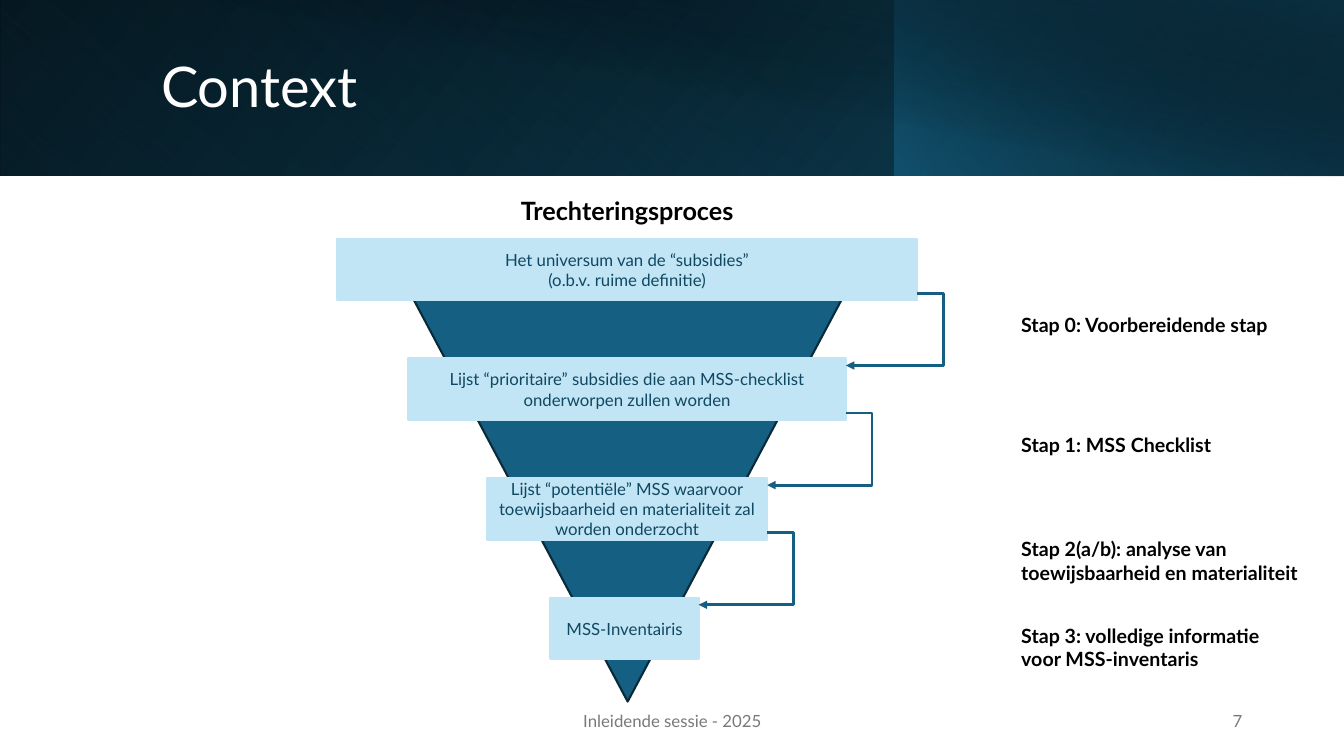
from dataclasses import dataclass
from lxml.etree import SubElement
from pptx import Presentation
from pptx.dml.color import RGBColor
from pptx.enum.shapes import MSO_CONNECTOR, MSO_SHAPE
from pptx.enum.text import MSO_ANCHOR, PP_ALIGN
from pptx.oxml.ns import qn
from pptx.util import Inches, Pt

COLORS = {
    "white": "FFFFFF", "black": "000000", "gray": "797979",
    "blue": "156082", "navy": "104862", "deep": "0B3041",
    "edge": "092A39", "pale": "C1E5F5",
}
FONT = "Lato"
TAB_W, TAB_H = 0.1, 0.13
BAR_H, BAR_TOP, BAR_SPAN = 0.61, 2.37, 3.56
ENTRY, EXIT, REACH = 0.07, 0.54, 0.26


@dataclass
class Stop:
    """One gradient stop, with its opacity in percent."""
    place: float
    color: str
    alpha: int = 100


@dataclass
class Panel:
    """One gradient layer of the header."""
    box: tuple
    angle: int
    stops: tuple
    turn: int = 0
    flip: bool = True


@dataclass
class Bar:
    """One level of the funnel."""
    left: float
    width: float
    text: str


@dataclass
class Step:
    """One step label beside the funnel."""
    top: float
    width: float
    height: float
    text: str


PANELS = [
    Panel((0, 0, 13.33, 1.74), 140, (Stop(0, "black"), Stop(1, "navy"))),
    Panel((0, 0, 8.88, 1.74), 230,
          (Stop(0.2, "blue", 0), Stop(1, "deep", 55)), turn=180),
    Panel((8.87, 0, 4.46, 1.74), 220,
          (Stop(0, "blue", 66), Stop(1, "black", 30))),
    Panel((0.5, 0, 12.83, 1.75), 280,
          (Stop(0.5, "black", 0), Stop(0.99, "deep", 52)), flip=False),
]
BARS = [
    Bar(3.34, 5.76, "Het universum van de “subsidies”\n(o.b.v. ruime definitie)"),
    Bar(4.05, 4.34, "Lijst “prioritaire” subsidies die aan MSS-checklist "
        "onderworpen zullen worden"),
    Bar(4.83, 2.78, "Lijst “potentiële” MSS waarvoor toewijsbaarheid en "
        "materialiteit zal worden onderzocht"),
    Bar(5.46, 1.47, "MSS-Inventairis"),
]
STEPS = [
    Step(3.06, 2.93, 0.34, "Stap 0: Voorbereidende stap"),
    Step(4.25, 2.98, 0.34, "Stap 1: MSS Checklist"),
    Step(5.28, 2.99, 0.81, "Stap 2(a/b): analyse van toewijsbaarheid en materialiteit"),
    Step(6.14, 2.99, 0.57, "Stap 3: volledige informatie voor MSS-inventaris"),
]


def rgb(name: str) -> RGBColor:
    """Look up a colour by name."""
    return RGBColor.from_string(COLORS[name])


def write(shape, text: str, size: float = 12, color: str = "black",
          bold: bool = False, align=PP_ALIGN.LEFT, anchor=MSO_ANCHOR.TOP,
          space: float = 1.0):
    """Put formatted text in a shape."""
    frame = shape.text_frame
    frame.word_wrap = True
    frame.vertical_anchor = anchor
    frame.text = text
    for para in frame.paragraphs:
        para.alignment = align
        para.line_spacing = space
        para.font.name = FONT
        para.font.size = Pt(size)
        para.font.bold = bold
        para.font.color.rgb = rgb(color)


def label(slide, box: tuple, text: str, **style):
    """Add a text box."""
    write(slide.shapes.add_textbox(*map(Inches, box)), text, **style)


def block(slide, kind, box: tuple, fill: str, line: str):
    """Add a solid shape with an outline."""
    shape = slide.shapes.add_shape(kind, *map(Inches, box))
    shape.shadow.inherit = False
    shape.fill.solid()
    shape.fill.fore_color.rgb = rgb(fill)
    shape.line.color.rgb = rgb(line)
    shape.line.width = Pt(1.5)
    return shape


def shade(slide, panel: Panel):
    """Add one gradient layer."""
    shape = slide.shapes.add_shape(MSO_SHAPE.RECTANGLE, *map(Inches, panel.box))
    shape.shadow.inherit = False
    shape.line.fill.background()
    shape.rotation = panel.turn
    props = shape.element.spPr
    if panel.flip:
        props.find(qn("a:xfrm")).set("flipH", "1")
    shape.fill.gradient()
    shape.fill.gradient_angle = 360 - panel.angle
    for mark, stop in zip(shape.fill.gradient_stops, panel.stops):
        mark.position = stop.place
        mark.color.rgb = rgb(stop.color)
    for node, stop in zip(props.iter(qn("a:srgbClr")), panel.stops):
        if stop.alpha < 100:
            SubElement(node, qn("a:alpha")).set("val", str(stop.alpha * 1000))


def add_tab(slide, bar: Bar, mid: float):
    """Add a small docking tab at the right end of a bar."""
    box = (bar.left + bar.width - TAB_W, mid - TAB_H / 2, TAB_W, TAB_H)
    return block(slide, MSO_SHAPE.RECTANGLE, box, "pale", "pale")


def link(slide, start, end):
    """Join two tabs by an elbow arrow that loops out to the right."""
    arrow = slide.shapes.add_connector(MSO_CONNECTOR.ELBOW, 0, 0, 0, 0)
    arrow.begin_connect(start, 3)
    arrow.end_connect(end, 3)
    arrow.line.color.rgb = rgb("blue")
    arrow.line.width = Pt(2)
    props = arrow.element.spPr
    guides = props.find(qn("a:prstGeom")).get_or_add_avLst()
    bend = round(-Inches(REACH) / arrow.width * 100000)
    guide = SubElement(guides, qn("a:gd"))
    guide.set("name", "adj1")
    guide.set("fmla", f"val {bend}")
    SubElement(props.find(qn("a:ln")), qn("a:tailEnd")).set("type", "triangle")
    SubElement(props, qn("a:effectLst"))


def funnel(slide):
    """Draw the funnel, its bars and the arrows between them."""
    cone = block(slide, MSO_SHAPE.ISOSCELES_TRIANGLE,
                 (3.83, 2.46, 4.79, 4.5), "blue", "edge")
    cone.rotation = 180
    tops = [BAR_TOP + BAR_SPAN * i / (len(BARS) - 1) for i in range(len(BARS))]
    for bar, top in zip(BARS, tops):
        shape = block(slide, MSO_SHAPE.RECTANGLE,
                      (bar.left, top, bar.width, BAR_H), "pale", "pale")
        write(shape, bar.text, color="navy", align=PP_ALIGN.CENTER,
              anchor=MSO_ANCHOR.MIDDLE)
    levels = list(zip(BARS, tops))
    for (bar, top), (below, floor) in zip(levels, levels[1:]):
        link(slide, add_tab(slide, bar, top + EXIT),
             add_tab(slide, below, floor + ENTRY))


def main():
    """Build and save the slide."""
    deck = Presentation()
    deck.slide_width, deck.slide_height = Inches(13.33), Inches(7.5)
    slide = deck.slides.add_slide(deck.slide_layouts[6])
    for panel in PANELS:
        shade(slide, panel)
    label(slide, (1.5, 0.32, 10.82, 1.13), "Context", size=40, color="white",
          anchor=MSO_ANCHOR.MIDDLE, space=0.9)
    label(slide, (4.42, 6.95, 4.5, 0.4), "Inleidende sessie - 2025", color="gray",
          align=PP_ALIGN.CENTER, anchor=MSO_ANCHOR.MIDDLE)
    label(slide, (9.42, 6.95, 3, 0.4), "7", color="gray",
          align=PP_ALIGN.RIGHT, anchor=MSO_ANCHOR.MIDDLE)
    funnel(slide)
    label(slide, (3.34, 1.89, 5.76, 0.4), "Trechteringsproces", size=18,
          bold=True, align=PP_ALIGN.CENTER)
    for step in STEPS:
        label(slide, (10.03, step.top, step.width, step.height), step.text,
              size=14, bold=True)
    deck.save("out.pptx")


if __name__ == "__main__":
    main()
